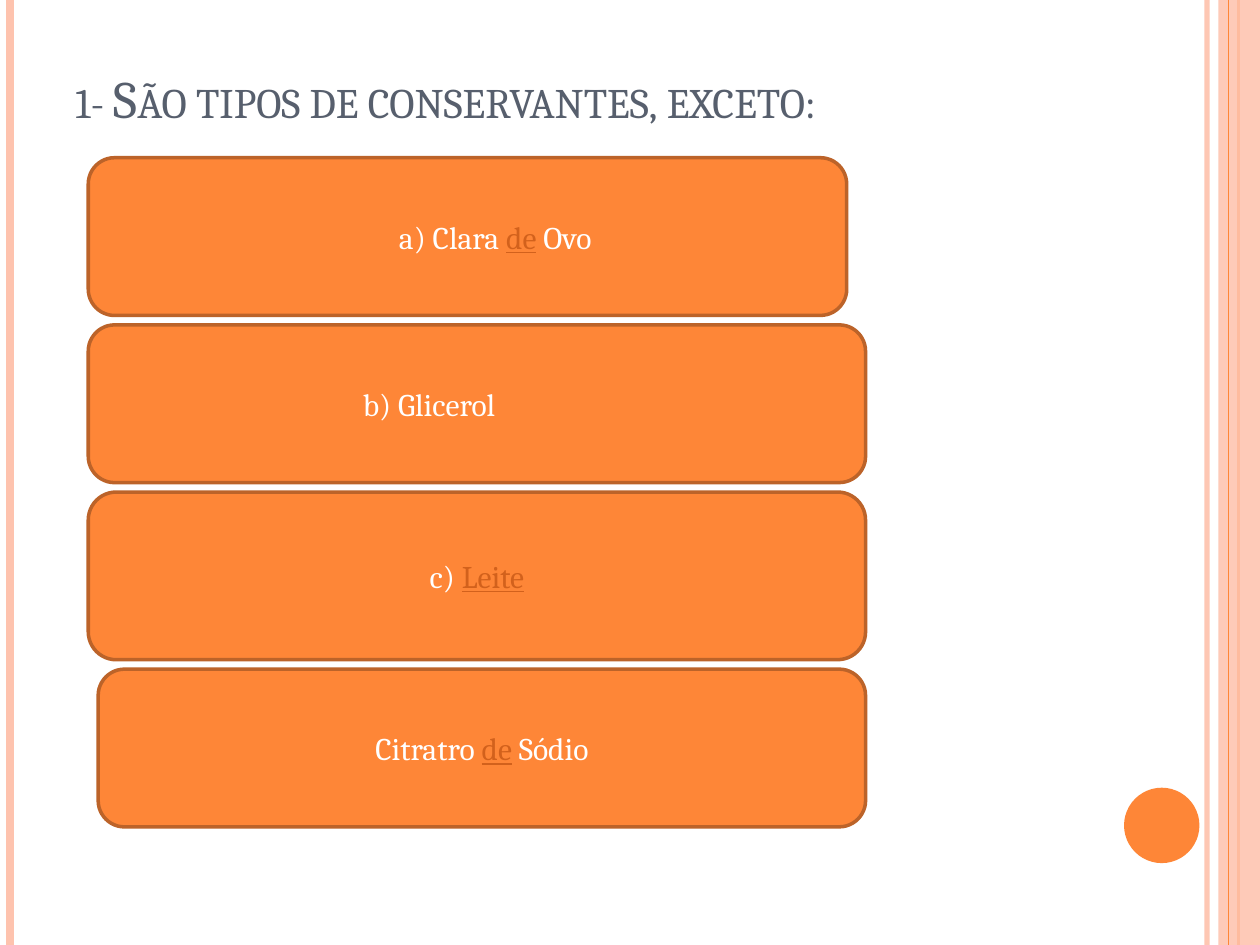
from typing import NamedTuple

from lxml import etree
from pptx import Presentation
from pptx.dml.color import RGBColor
from pptx.enum.shapes import MSO_CONNECTOR, MSO_SHAPE
from pptx.enum.text import MSO_ANCHOR, PP_ALIGN
from pptx.oxml.ns import qn
from pptx.util import Cm, Pt

LINE = MSO_CONNECTOR.STRAIGHT
RECT, ROUND, OVAL = MSO_SHAPE.RECTANGLE, MSO_SHAPE.ROUNDED_RECTANGLE, MSO_SHAPE.OVAL
CENTER, MIDDLE, BOTTOM = PP_ALIGN.CENTER, MSO_ANCHOR.MIDDLE, MSO_ANCHOR.BOTTOM

ORANGE = RGBColor(0xFE, 0x86, 0x37)
PINK = RGBColor(0xFE, 0xC3, 0xAE)
BROWN = RGBColor(0xBC, 0x63, 0x29)
RUST = RGBColor(0xD2, 0x61, 0x1C)
SLATE = RGBColor(0x57, 0x5F, 0x6D)
WHITE = RGBColor(0xFF, 0xFF, 0xFF)

FONT = "Cambria"
WIDE, HIGH = 25.4, 19.05
TOP, GAP = 3.18, 0.19
INSET = 0.25


class Stripe(NamedTuple):
    x: float
    color: RGBColor
    weight: float
    alpha: int = 100


class Run(NamedTuple):
    text: str
    linked: bool = False


class Option(NamedTuple):
    runs: list[Run]
    left: float = 1.78
    right: float = 17.45
    height: float = 3.18
    pad_left: float = INSET
    pad_right: float = INSET


BACK = [
    Stripe(24.33, PINK, 3, 93),
    Stripe(0.2, PINK, 4.5),
    Stripe(24.97, ORANGE, 1.5),
]
FRONT = Stripe(24.77, ORANGE, 0.75)

OPTIONS = [
    Option([Run("a) Clara "), Run("de", True), Run(" Ovo")], right=17.07, pad_left=1.37),
    Option([Run("b) Glicerol")], pad_right=2.18),
    Option([Run("c) "), Run("Leite", True)], height=3.38),
    Option([Run("Citratro "), Run("de", True), Run(" Sódio")], left=1.98),
]


def fade(props, alpha: int) -> None:
    if alpha < 100:
        color = next(props.iter(qn("a:srgbClr")))
        etree.SubElement(color, qn("a:alpha")).set("val", str(alpha * 1000))


def draw_stripe(shapes, stripe: Stripe) -> None:
    x = Cm(stripe.x)
    line = shapes.add_connector(LINE, x, 0, x, Cm(HIGH))
    line.line.color.rgb = stripe.color
    line.line.width = Pt(stripe.weight)
    props = line._element.spPr
    fade(props, stripe.alpha)
    etree.SubElement(props, qn("a:effectLst"))


def draw_shape(shapes, kind, left: float, top: float, width: float, height: float,
               color: RGBColor):
    shape = shapes.add_shape(kind, Cm(left), Cm(top), Cm(width), Cm(height))
    shape.shadow.inherit = False
    shape.fill.solid()
    shape.fill.fore_color.rgb = color
    shape.line.fill.background()
    return shape


def set_font(font, size: float, color: RGBColor) -> None:
    font.name = FONT
    font.size = Pt(size)
    font.color.rgb = color


def draw_title(shapes, text: str) -> None:
    frame = shapes.add_textbox(Cm(1.27), Cm(0.76), Cm(20.75), Cm(1.96)).text_frame
    frame.word_wrap = True
    frame.vertical_anchor = BOTTOM
    para = frame.paragraphs[0]
    set_font(para.font, 30, SLATE)
    run = para.add_run()
    run.text = text
    run.font._element.set("cap", "small")


def draw_option(shapes, option: Option, top: float) -> None:
    width = option.right - option.left
    shape = draw_shape(shapes, ROUND, option.left, top, width, option.height, ORANGE)
    shape.line.color.rgb = BROWN
    shape.line.width = Pt(2)
    frame = shape.text_frame
    frame.word_wrap = True
    frame.vertical_anchor = MIDDLE
    frame.margin_left = Cm(option.pad_left)
    frame.margin_right = Cm(option.pad_right)
    para = frame.paragraphs[0]
    para.alignment = CENTER
    set_font(para.font, 18, WHITE)
    for part in option.runs:
        run = para.add_run()
        run.text = part.text
        if part.linked:
            run.font.color.rgb = RUST
            run.font.underline = True


def main() -> None:
    deck = Presentation()
    deck.slide_width, deck.slide_height = Cm(WIDE), Cm(HIGH)
    shapes = deck.slides.add_slide(deck.slide_layouts[6]).shapes

    for stripe in BACK:
        draw_stripe(shapes, stripe)
    band = draw_shape(shapes, RECT, 24.56, 0, 0.84, HIGH, PINK)
    fade(band._element.spPr, 87)
    draw_stripe(shapes, FRONT)
    draw_shape(shapes, OVAL, 22.66, 15.88, 1.52, 1.52, ORANGE)

    draw_title(shapes, "1- São tipos de conservantes, exceto:")
    top = TOP
    for option in OPTIONS:
        draw_option(shapes, option, top)
        top += option.height + GAP

    deck.save("out.pptx")


if __name__ == "__main__":
    main()
